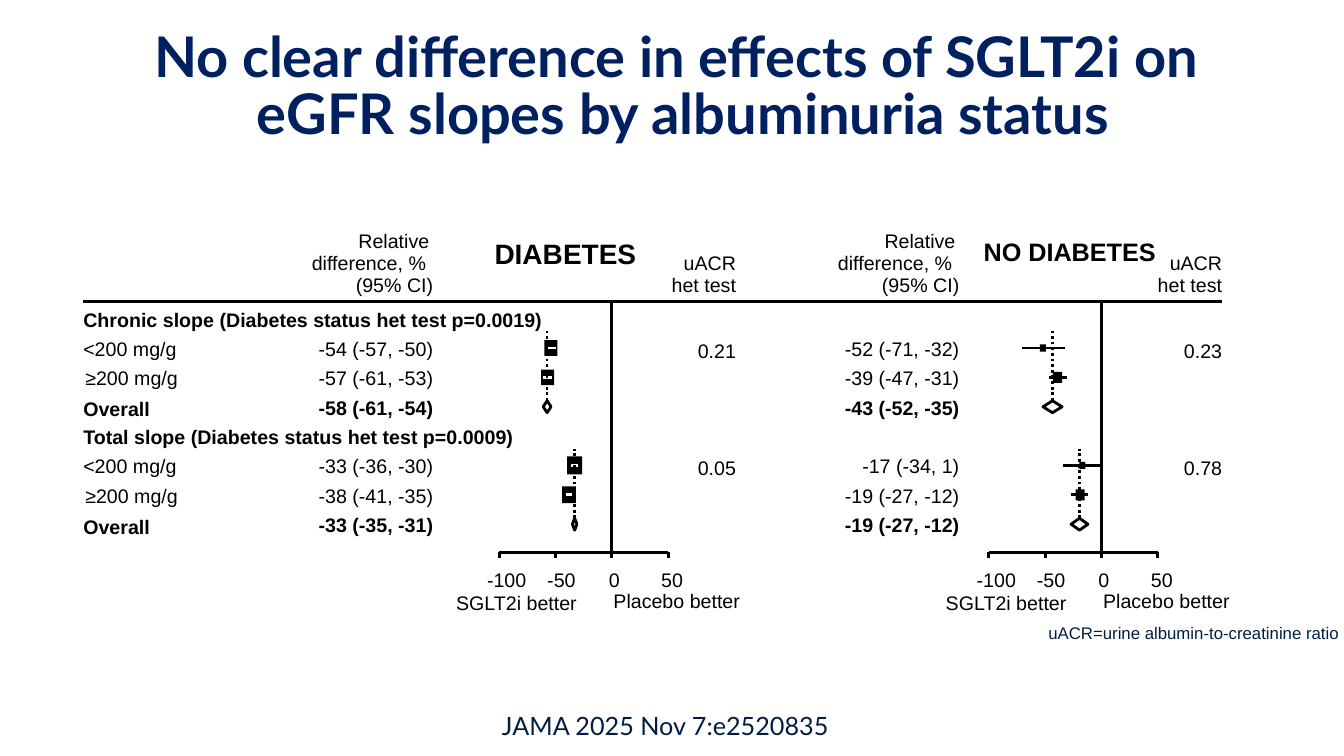
from dataclasses import dataclass
from lxml.etree import SubElement
from pptx import Presentation
from pptx.dml.color import RGBColor
from pptx.enum.dml import MSO_LINE_DASH_STYLE as Dash
from pptx.enum.shapes import MSO_CONNECTOR, MSO_SHAPE
from pptx.enum.text import MSO_ANCHOR as Anchor, MSO_AUTO_SIZE as Fit, PP_ALIGN as Align
from pptx.oxml.ns import qn
from pptx.util import Cm, Pt

BLACK, WHITE, NAVY, INK = "000000", "FFFFFF", "002060", "011E41"
LEFT, TOP, STEP = 2.1, 7.75, 0.74   # first column, first row, row pitch
MID = 0.28                          # row top to marker centre
UNIT = 1.42 / 50                    # cm per percentage point
RULE, AXIS = 7.59, 13.92            # header rule and axis heights


@dataclass
class Row:
    est: int
    low: int
    high: int
    size: float = 0  # marker width; 0 draws a diamond


@dataclass
class Group:
    rows: list[Row]
    het: str


@dataclass
class Panel:
    name: str
    points: int
    mid: float   # centre of the heading
    zero: float  # zero line
    stat: float  # right edge of the estimates
    test: float  # right edge of the het test
    bar: str     # colour of the interval bars
    groups: list[Group]


@dataclass
class Tick:
    value: int
    shift: float


HEADS = ["Chronic slope (Diabetes status het test p=0.0019)",
         "Total slope (Diabetes status het test p=0.0009)"]
NAMES = [("<200 mg/g", 0, 0), ("≥200 mg/g", 0.05, 0), ("Overall", 0, 0.04)]
TICKS = [Tick(-100, 0.19), Tick(-50, 0.15), Tick(0, 0.06), Tick(50, 0.1)]
PANELS = [
    Panel("DIABETES", 20, 14.25, 15.42, 10.92, 18.55, WHITE, [
        Group([Row(-54, -57, -50, 0.33), Row(-57, -61, -53, 0.33), Row(-58, -61, -54)], "0.21"),
        Group([Row(-33, -36, -30, 0.38), Row(-38, -41, -35, 0.35), Row(-33, -35, -31)], "0.05"),
    ]),
    Panel("NO DIABETES", 18, 26.96, 27.76, 24.18, 30.8, BLACK, [
        Group([Row(-52, -71, -32, 0.15), Row(-39, -47, -31, 0.23), Row(-43, -52, -35)], "0.23"),
        Group([Row(-17, -34, 1, 0.15), Row(-19, -27, -12, 0.23), Row(-19, -27, -12)], "0.78"),
    ]),
]

deck = Presentation()
deck.slide_width, deck.slide_height = Cm(33.87), Cm(19.05)
slide = deck.slides.add_slide(deck.slide_layouts[5])


def rgb(code: str) -> RGBColor:
    return RGBColor.from_string(code)


def style(para, size: float, color: str, bold: bool, face: str) -> None:
    font = para.font
    font.size, font.bold, font.name = Pt(size), bold, face
    font.color.rgb = rgb(color)


def label(text: str, x: float, y: float, width: float, align=Align.LEFT, size: float = 14,
          bold: bool = False, color: str = BLACK, face: str = "Arial", high: float = 0.6) -> None:
    """Place text with its left edge, centre or right edge at x."""
    part = {Align.LEFT: 0, Align.CENTER: 0.5, Align.RIGHT: 1}[align]
    box = slide.shapes.add_textbox(Cm(x - part * width), Cm(y), Cm(width), Cm(high))
    frame = box.text_frame
    frame.word_wrap = True
    frame.margin_left = frame.margin_right = frame.margin_top = frame.margin_bottom = 0
    para = frame.paragraphs[0]
    para.text, para.alignment = text, align
    style(para, size, color, bold, face)


def line(x1: float, y1: float, x2: float, y2: float, color: str = BLACK, dots: bool = False) -> None:
    link = slide.shapes.add_connector(MSO_CONNECTOR.STRAIGHT, Cm(x1), Cm(y1), Cm(x2), Cm(y2))
    link.line.color.rgb, link.line.width = rgb(color), Pt(2)
    if dots:
        link.line.dash_style = Dash.ROUND_DOT
    SubElement(link._element.spPr, qn("a:effectLst"))


def square(x: float, y: float, width: float) -> None:
    high = 1.2 * width
    box = slide.shapes.add_shape(MSO_SHAPE.RECTANGLE, Cm(x - width / 2), Cm(y - high / 2),
                                 Cm(width), Cm(high))
    box.shadow.inherit = False
    box.fill.solid()
    box.fill.fore_color.rgb = rgb(BLACK)
    box.line.fill.background()


def diamond(low: float, high: float, y: float) -> None:
    mid, half = (low + high) / 2, 0.15
    path = slide.shapes.build_freeform(Cm(low), Cm(y))
    path.add_line_segments([(Cm(mid), Cm(y + half)), (Cm(high), Cm(y)), (Cm(mid), Cm(y - half))])
    shape = path.convert_to_shape()
    shape.shadow.inherit = False
    shape.fill.background()
    shape.line.color.rgb, shape.line.width = rgb(BLACK), Pt(2)
    line(mid, y - half, mid, y - half - 1.75, dots=True)


def plot(row: Row, panel: Panel, top: float) -> None:
    low, est, high = (panel.zero + UNIT * n for n in (row.low, row.est, row.high))
    y = top + MID
    label(f"{row.est} ({row.low}, {row.high})", panel.stat, top, 3.1, Align.RIGHT,
          bold=not row.size)
    if row.size:
        square(est, y, row.size)
        line(low, y, high, y, panel.bar)
    else:
        diamond(low, high, y)


def draw(panel: Panel) -> None:
    # Column headings
    label(panel.name, panel.mid, 5.95, 5, Align.CENTER, panel.points, True, high=0.85)
    for i, (text, shift) in enumerate([("Relative", 0.1), ("difference, %", 0.18), ("(95% CI)", 0)]):
        label(text, panel.stat - shift, 5.77 + 0.56 * i, 3.1, Align.RIGHT)
    for i, text in enumerate(["uACR", "het test"]):
        label(text, panel.test, 6.33 + 0.56 * i, 1.8, Align.RIGHT)

    # Axis
    line(panel.zero, AXIS, panel.zero, RULE)
    line(panel.zero - 100 * UNIT, AXIS, panel.zero + 50 * UNIT, AXIS)
    for tick in TICKS:
        x = panel.zero + tick.value * UNIT
        line(x, AXIS, x, AXIS + 0.13)
        label(str(tick.value), x + tick.shift, 14.3, 1.2, Align.CENTER)
    label("SGLT2i better", panel.zero - 0.88, 14.88, 3.2, Align.RIGHT)
    label("Placebo better", panel.zero + 0.04, 14.83, 3.4)

    # Estimates
    for g, group in enumerate(panel.groups):
        first = TOP + STEP * (4 * g + 1)
        label(group.het, panel.test, first + 0.05, 1.2, Align.RIGHT)
        for i, row in enumerate(group.rows):
            plot(row, panel, first + STEP * i)


# Title
title = slide.shapes.title
title.left, title.top, title.width, title.height = Cm(2.39), Cm(2.36), Cm(29.64), Cm(1.32)
frame = title.text_frame
frame.auto_size, frame.word_wrap, frame.vertical_anchor = Fit.NONE, True, Anchor.BOTTOM
frame.margin_left = frame.margin_right = frame.margin_top = frame.margin_bottom = 0
frame.text = "No clear difference in effects of SGLT2i on \veGFR slopes by albuminuria status"
head = frame.paragraphs[0]
head.alignment, head.line_spacing = Align.CENTER, 0.85
style(head, 40, NAVY, True, "Lato")

# Row names
line(LEFT, RULE, 30.8, RULE)
for g, text in enumerate(HEADS):
    y = TOP + 4 * STEP * g
    label(text, LEFT, y, 12, bold=True)
    for i, (name, dx, dy) in enumerate(NAMES, 1):
        label(name, LEFT + dx, y + STEP * i + dy, 2.6, bold=name == "Overall")

# Forest plots
for panel in PANELS:
    draw(panel)

# Notes at the foot
label("JAMA 2025 Nov 7:e2520835", 12.65, 17.9, 8.9, size=18, color=INK, face="Lato", high=0.78)
label("uACR=urine albumin-to-creatinine ratio", 26.42, 15.7, 7.45, size=12, color=INK, high=0.5)

deck.save("out.pptx")
